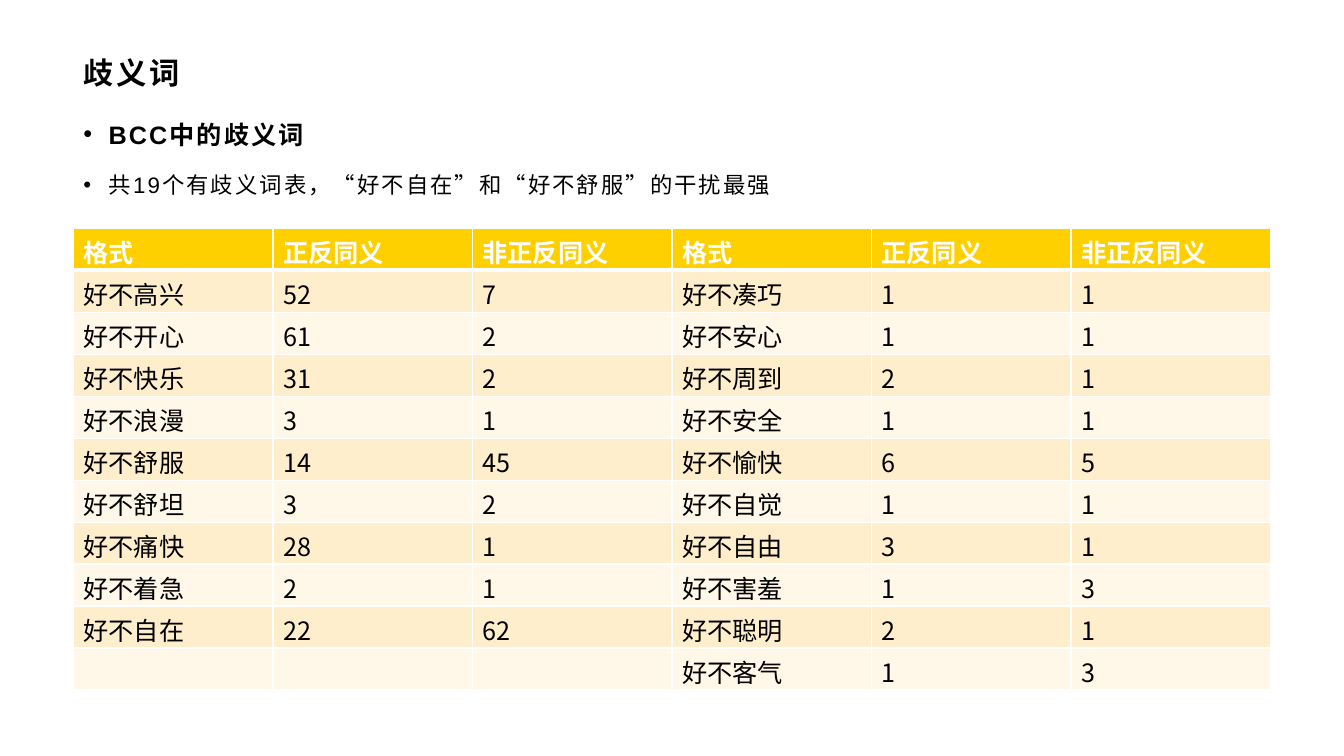
"""Build the slide on ambiguous words in BCC: title, two bullets and a count table."""
from lxml import etree
from pptx import Presentation
from pptx.dml.color import RGBColor
from pptx.enum.text import MSO_ANCHOR
from pptx.oxml import parse_xml
from pptx.oxml.ns import nsdecls, qn
from pptx.util import Pt

CJK = "Noto Sans CJK SC"
LEFT, WIDTH = 52.5, 855
HEADER = ["格式", "正反同义", "非正反同义"] * 2
COUNTS = [
    ["好不高兴", 52, 7, "好不凑巧", 1, 1],
    ["好不开心", 61, 2, "好不安心", 1, 1],
    ["好不快乐", 31, 2, "好不周到", 2, 1],
    ["好不浪漫", 3, 1, "好不安全", 1, 1],
    ["好不舒服", 14, 45, "好不愉快", 6, 5],
    ["好不舒坦", 3, 2, "好不自觉", 1, 1],
    ["好不痛快", 28, 1, "好不自由", 3, 1],
    ["好不着急", 2, 1, "好不害羞", 1, 3],
    ["好不自在", 22, 62, "好不聪明", 2, 1],
    ["", "", "", "好不客气", 1, 3],
]


def rgb(color):
    return RGBColor.from_string(color)


def style(paragraph, size, bold, color="000000", latin="Arial", spacing=0):
    font = paragraph.font
    font.size, font.bold, font.name = Pt(size), bold, latin
    font.color.rgb = rgb(color)
    properties = paragraph._p.pPr.find(qn("a:defRPr"))
    etree.SubElement(properties, qn("a:ea")).set("typeface", CJK)
    if spacing:
        properties.set("spc", str(round(spacing * 100)))


prs = Presentation()
prs.slide_width, prs.slide_height = Pt(960), Pt(540)
slide = prs.slides.add_slide(prs.slide_layouts[6])

title = slide.shapes.add_textbox(Pt(LEFT), Pt(34.5), Pt(WIDTH), Pt(34.5)).text_frame
title.word_wrap = True
title.vertical_anchor = MSO_ANCHOR.MIDDLE
title.text = "歧义词"
style(title.paragraphs[0], 21.6, True, spacing=2)

summary = slide.shapes.add_textbox(Pt(LEFT), Pt(75), Pt(WIDTH), Pt(424)).text_frame
summary.word_wrap = True
summary.text = "BCC中的歧义词\n共19个有歧义词表，“好不自在”和“好不舒服”的干扰最强"
for point, size, bold in zip(summary.paragraphs, (18, 16), (True, False)):
    point.line_spacing = 1.3
    point.space_after = Pt(10)
    indent = point._p.get_or_add_pPr()
    indent.set("marL", str(Pt(18)))
    indent.set("indent", str(-Pt(18)))
    etree.SubElement(indent, qn("a:buFont")).set("typeface", "Arial")
    etree.SubElement(indent, qn("a:buChar")).set("char", "•")
    style(point, size, bold, spacing=1.5)

rows = [HEADER] + COUNTS
counts = slide.shapes.add_table(len(rows), len(HEADER), Pt(LEFT), Pt(163),
                                Pt(WIDTH), Pt(30 * len(rows))).table
for r, values in enumerate(rows):
    is_header = r == 0
    fill = "FED000" if is_header else "FFEECC" if r % 2 else "FFF7E7"
    for c, value in enumerate(values):
        cell = counts.cell(r, c)
        cell.text = str(value)
        if is_header:
            style(cell.text_frame.paragraphs[0], 18, True, "FFFFFF")
        else:
            style(cell.text_frame.paragraphs[0], 18, False, latin=CJK)
        borders = cell._tc.get_or_add_tcPr()
        for side in "LRTB":
            thick = (is_header and side == "B") or (r == 1 and side == "T")
            borders.append(parse_xml(
                f'<a:ln{side} {nsdecls("a")} w="{Pt(3 if thick else 1)}"><a:solidFill>'
                f'<a:srgbClr val="FFFFFF"/></a:solidFill></a:ln{side}>'))
        cell.fill.solid()
        cell.fill.fore_color.rgb = rgb(fill)

prs.save("out.pptx")
